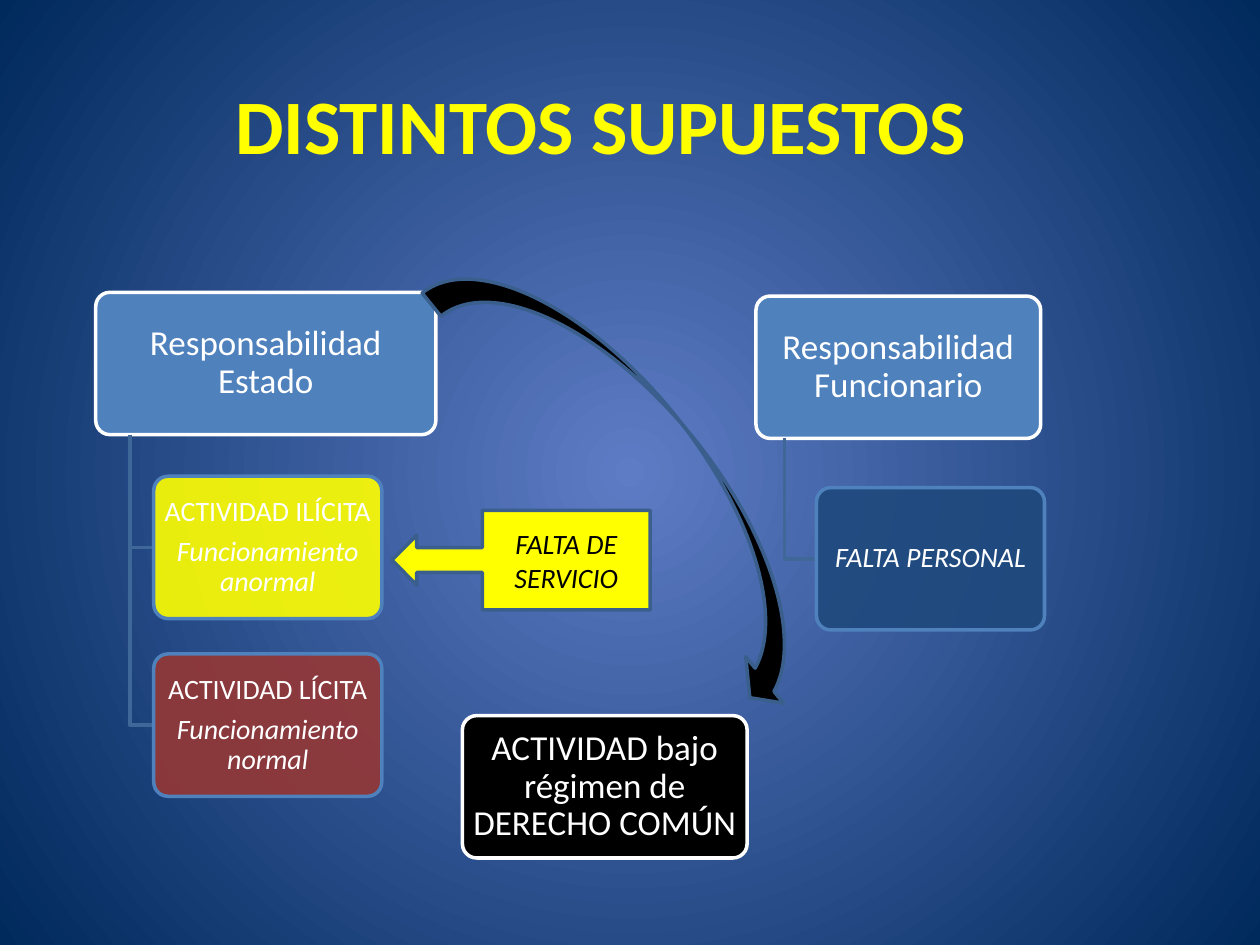
from dataclasses import dataclass

from lxml.etree import SubElement as Sub
from pptx import Presentation
from pptx.dml.color import RGBColor as Rgb
from pptx.enum.shapes import MSO_SHAPE as Kind
from pptx.enum.text import MSO_ANCHOR as Anchor, PP_ALIGN as Align
from pptx.oxml.ns import qn
from pptx.util import Inches, Pt


@dataclass(frozen=True)
class Theme:
    font: str = "Calibri"
    white: str = "FFFFFF"
    black: str = "000000"
    yellow: str = "FFFF00"
    blue: str = "4F81BD"
    navy: str = "1F497D"
    red: str = "953735"
    link: str = "3F6797"
    edge: str = "3A5F8C"
    glow: str = "5E7CC5"
    dark: str = "00295C"
    title: int = 44
    head: int = 20
    item: int = 16
    line: int = 2


T = Theme()
TALL = 1.13  # height of every box
WIDE = 1.81  # width of a child box


def color(text):
    return Rgb.from_string(text)


def backdrop(slide):
    """Radial gradient, light in the centre."""
    fill = slide.background.fill
    fill.gradient()
    for stop, tone in zip(fill.gradient_stops, (T.glow, T.dark)):
        stop.color.rgb = color(tone)
    grad = slide.element.find(".//" + qn("a:gradFill"))
    grad.remove(grad.find(qn("a:lin")))
    ring = Sub(grad, qn("a:path"), path="circle")
    Sub(ring, qn("a:fillToRect"), l="50000", t="50000", r="50000", b="50000")


def add_run(par, text, size, tone, bold=False, slant=False):
    run = par.add_run()
    run.text = text
    font = run.font
    font.name, font.size = T.font, Pt(size)
    font.bold, font.italic = bold, slant
    font.color.rgb = color(tone)


def write(shape, runs, size, tone, tight=True):
    """One centred paragraph for each (text, slant) pair."""
    frame = shape.text_frame
    frame.word_wrap = True
    frame.vertical_anchor = Anchor.MIDDLE
    if tight:
        frame.margin_left = frame.margin_right = Inches(0.04)
        frame.margin_top = frame.margin_bottom = Inches(0.03)
    for i, (text, slant) in enumerate(runs):
        par = frame.add_paragraph() if i else frame.paragraphs[0]
        par.alignment = Align.CENTER
        if tight:
            par.line_spacing = 0.9
            par.space_after = Pt(0.35 * size)
        add_run(par, text, size, tone, slant=slant)


def add_form(slide, kind, area, fill, line):
    shape = slide.shapes.add_shape(kind, *map(Inches, area))
    shape.shadow.inherit = False
    shape.fill.solid()
    shape.fill.fore_color.rgb = color(fill)
    shape.line.color.rgb = color(line)
    shape.line.width = Pt(T.line)
    return shape


def add_box(slide, area, fill, line, runs, size):
    box = add_form(slide, Kind.ROUNDED_RECTANGLE, area, fill, line)
    box.adjustments[0] = 0.1
    write(box, runs, size, T.white)
    return box


def add_head(slide, left, top, wide, text, fill=T.blue):
    add_box(slide, (left, top, wide, TALL), fill, T.white,
            [(text, False)], T.head)


def add_link(slide, x, top, end, mid):
    """Elbow from a head down and across to its child."""
    pen = slide.shapes.build_freeform(Inches(x), Inches(top))
    pen.add_line_segments([(Inches(x), Inches(mid)),
                           (Inches(end), Inches(mid))], close=False)
    link = pen.convert_to_shape()
    link.shadow.inherit = False
    link.fill.background()
    link.line.color.rgb = color(T.link)
    link.line.width = Pt(T.line)


def add_tree(slide, left, top, wide, text, child, items):
    """Head with children hung from a trunk at a tenth of its width."""
    add_head(slide, left, top, wide, text)
    for y, fill, runs in items:
        add_link(slide, left + wide / 10, top + TALL, child, y + TALL / 2)
        box = add_box(slide, (child, y, WIDE, TALL), fill, T.blue,
                      runs, T.item)
        tone = box.fill.fore_color.rgb
        node = box.element.spPr.find(f"{qn('a:solidFill')}/{qn('a:srgbClr')}")
        if tone is not None:
            Sub(node, qn("a:alpha"), val="90000")


def add_title(slide, text):
    title = slide.shapes.title
    title.left, title.top = Inches(0.52), Inches(0.36)
    title.width, title.height = Inches(8.5), Inches(1.25)
    title.text_frame.vertical_anchor = Anchor.MIDDLE
    par = title.text_frame.paragraphs[0]
    par.alignment = Align.CENTER
    add_run(par, text, T.title, T.yellow, bold=True)


def main():
    deck = Presentation()
    deck.slide_width, deck.slide_height = Inches(10), Inches(7.5)
    slide = deck.slides.add_slide(deck.slide_layouts[5])
    backdrop(slide)
    add_title(slide, "DISTINTOS SUPUESTOS")

    # State and official, each with its cases
    add_tree(slide, 0.76, 2.32, 2.7, "Responsabilidad Estado", 1.22, [
        (3.78, T.yellow, [("ACTIVIDAD ILÍCITA", False),
                          ("Funcionamiento anormal", True)]),
        (5.19, T.red, [("ACTIVIDAD LÍCITA", False),
                       ("Funcionamiento normal", True)]),
    ])
    add_tree(slide, 6, 2.35, 2.26, "Responsabilidad Funcionario", 6.48, [
        (3.87, T.navy, [("FALTA PERSONAL", True)]),
    ])

    # Common law regime, reached by the curved arrow
    add_head(slide, 3.67, 5.68, 2.26,
             "ACTIVIDAD bajo régimen de DERECHO COMÚN", T.black)
    curve = add_form(slide, Kind.CURVED_LEFT_ARROW, (4.62, 1.54, 0.95, 4.37),
                     T.black, T.edge)
    curve.rotation = 321
    for i, part in enumerate((0.25, 0.5, 0.19)):
        curve.adjustments[i] = part

    # Service fault points at the unlawful activity
    note = add_form(slide, Kind.LEFT_ARROW_CALLOUT, (3.11, 4.05, 2.05, 0.79),
                    T.yellow, T.edge)
    write(note, [("FALTA DE SERVICIO", True)], T.item, T.black, tight=False)

    deck.save("out.pptx")


if __name__ == "__main__":
    main()
